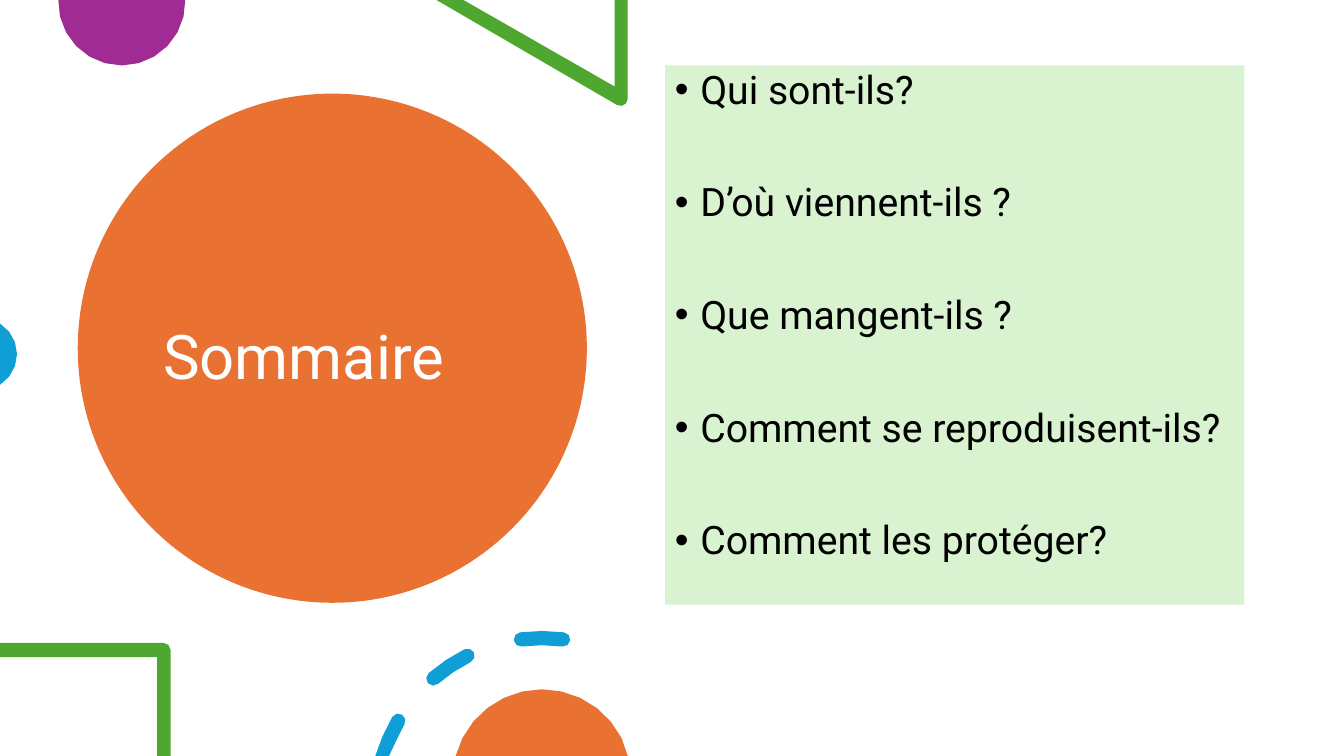
from collections import namedtuple
from dataclasses import dataclass
from math import ceil, cos, radians, sin, sqrt

from lxml import etree
from pptx import Presentation
from pptx import util as u
from pptx.dml.color import RGBColor
from pptx.enum import shapes, text
from pptx.oxml.ns import qn

Box = namedtuple("Box", "x y w h")  # centimetres


@dataclass(frozen=True)
class Theme:
    font: str = "Roboto"
    title_size: int = 44
    body_size: int = 28
    orange: str = "E97132"
    purple: str = "A02B93"
    green: str = "4EA72E"
    blue: str = "0F9ED5"
    panel: str = "D9F2D0"
    white: str = "FFFFFF"
    black: str = "000000"


THEME = Theme()
SLIDE = Box(0, 0, 33.87, 19.05)
QUESTIONS = [
    "Qui sont-ils?",
    "D’où viennent-ils ?",
    "Que mangent-ils ?",
    "Comment se reproduisent-ils?",
    "Comment les protéger?",
]


def lengths(box):
    return [u.Cm(v) for v in box]


def paint(sp, color):
    sp.shadow.inherit = False
    sp.fill.solid()
    sp.fill.fore_color.rgb = RGBColor.from_string(color)
    sp.line.fill.background()


def write(p, words, size, color, **spacing):
    p.alignment = text.PP_ALIGN.LEFT
    p.line_spacing = 0.9
    for name, value in spacing.items():
        setattr(p, name, value)
    r = p.add_run()
    r.text = words
    for name, value in {"name": THEME.font, "size": u.Pt(size)}.items():
        setattr(r.font, name, value)
    r.font.color.rgb = RGBColor.from_string(color)


def arc(cx, cy, radius, start, end):
    """Points along an arc, closer together on tight curves.

    Angles are in degrees, clockwise from the right.
    """
    span = radians(end - start)
    steps = ceil(abs(span) / sqrt(0.12 / radius))
    angles = [radians(start) + span * i / steps for i in range(steps + 1)]
    return [(cx + radius * cos(a), cy + radius * sin(a)) for a in angles]


def dash(cx, cy, radius, half, start, end):
    """Outline of a curved stroke with round ends."""
    (x0, y0), (x1, y1) = [(cx + radius * cos(radians(a)), cy + radius * sin(radians(a)))
                          for a in (start, end)]
    return (arc(cx, cy, radius + half, start, end)
            + arc(x1, y1, half, end, end + 180)[1:]
            + arc(cx, cy, radius - half, end, start)[1:]
            + arc(x0, y0, half, start + 180, start + 360)[1:-1])


def outline(s, box, color, *contours):
    """Fill closed contours, given relative to the box and kept inside it."""
    builder = None
    for contour in contours:
        first, *rest = [(u.Cm(box.x + min(max(x, 0), box.w)),
                         u.Cm(box.y + min(max(y, 0), box.h))) for x, y in contour]
        if builder is None:
            builder = s.shapes.build_freeform(*first, scale=1.0)
        else:
            builder.move_to(*first)
        builder.add_line_segments(rest, close=True)
    paint(builder.convert_to_shape(), color)


def title_circle(s, box):
    sp = s.shapes.add_shape(shapes.MSO_SHAPE.OVAL, *lengths(box))
    paint(sp, THEME.orange)
    title = Box(box.x + 1.9, box.y + 1.05, box.w - 3.84, box.h - 1.53)
    tf = s.shapes.add_textbox(*lengths(title)).text_frame
    tf.word_wrap = True
    tf.vertical_anchor = text.MSO_ANCHOR.MIDDLE
    write(tf.paragraphs[0], "Sommaire", THEME.title_size, THEME.white)


def question_panel(s, box):
    sp = s.shapes.add_shape(shapes.MSO_SHAPE.RECTANGLE, *lengths(box))
    paint(sp, THEME.panel)
    tf = sp.text_frame
    tf.word_wrap = True
    tf.vertical_anchor = text.MSO_ANCHOR.TOP
    for i, question in enumerate(QUESTIONS):
        p = tf.add_paragraph() if i else tf.paragraphs[0]
        write(p, question, THEME.body_size, THEME.black,
              space_before=u.Pt(50.2 if i else 0))
        pPr = p._p.get_or_add_pPr()
        for name, value in {"marL": 0.64, "indent": -0.64}.items():
            pPr.set(name, str(u.Cm(value)))
        etree.SubElement(pPr, qn("a:buFont")).set("typeface", "Arial")
        etree.SubElement(pPr, qn("a:buChar")).set("char", "•")


def top_decor(s, box):
    outline(s, box, THEME.purple, arc(1.6, 0.05, 1.6, -2, 182))
    triangle = [(box.w, 0), (14.02, 0), (14.02, 2.18), (10.21, 0), (9.53, 0)]
    outline(s, box, THEME.green, triangle + arc(14.17, 2.49, 0.18, 120, 0))


def left_decor(s, box):
    outline(s, box, THEME.blue, arc(-0.48, box.h / 2, 0.91, -58, 58))


def bottom_decor(s, box):
    square = [(0, 0.32), (0, 0.68), (3.96, 0.68), (3.96, box.h), (4.3, box.h)]
    outline(s, box, THEME.green, square + arc(4.12, 0.5, 0.18, 360, 270))
    spans = [(196, 210.2), (229.2, 243.4), (262.7, 277.3)]
    outline(s, box, THEME.blue,
            *[dash(13.66, 4.39, 4.19, 0.18, *span) for span in spans])
    outline(s, box, THEME.orange, arc(13.66, 3.74, 2.25, 194.4, 345.6))


def main():
    prs = Presentation()
    prs.slide_width, prs.slide_height = u.Cm(SLIDE.w), u.Cm(SLIDE.h)
    s = prs.slides.add_slide(prs.slide_layouts[6])
    title_circle(s, Box(1.96, 2.36, 12.83, 12.83))
    top_decor(s, Box(1.47, 0, 14.35, 2.67))
    left_decor(s, Box(0, 8.15, 0.43, 1.55))
    question_panel(s, Box(16.76, 1.65, 14.6, 13.59))
    bottom_decor(s, Box(0, 15.88, 15.82, 3.17))
    prs.save("out.pptx")


if __name__ == "__main__":
    main()
